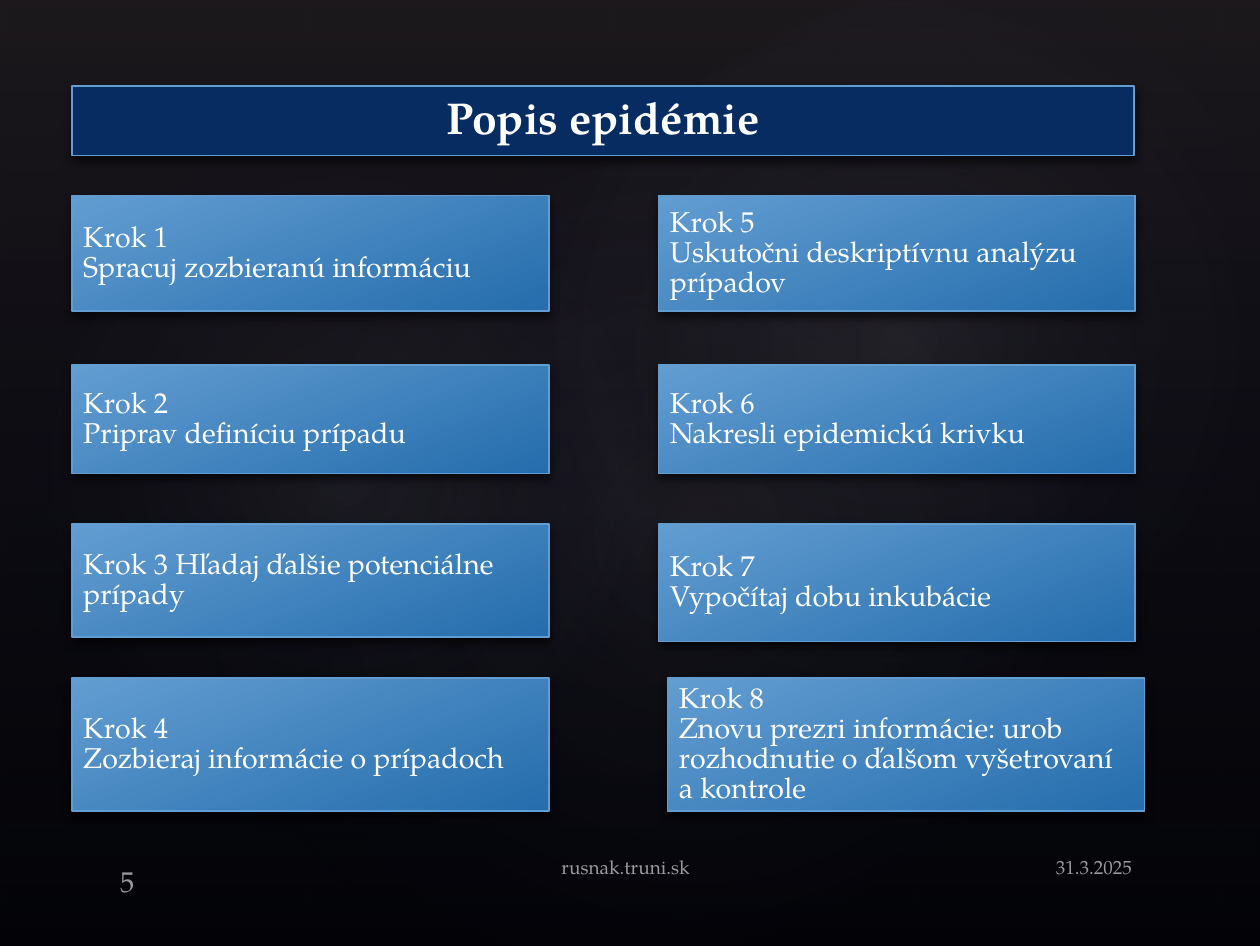
import pptx
import pptx.util
import pptx.oxml
import pptx.oxml.ns
import pptx.dml.color
import pptx.enum.shapes
import pptx.enum.text
from pptx.util import Inches, Pt

FONT = "TeX Gyre Pagella"
COLORS = {
    "black": "000000", "white": "FFFFFF", "navy": "072C62",
    "sky": "629DD1", "blue": "256DAD",
    "plum": "504652", "indigo": "242852", "mist": "C4BCC6",
}

# Content
TITLE = "Popis epidémie"
# Each column: left edge, then (lines, height, shift to the right) per step
COLUMNS = [
    (0.63, [
        (["Krok 1", "Spracuj zozbieranú informáciu"], 1.01, 0),
        (["Krok 2", "Priprav definíciu prípadu"], 0.95, 0),
        (["Krok 3 Hľadaj ďalšie potenciálne prípady"], 0.99, 0),
        (["Krok 4", "Zozbieraj informácie o prípadoch"], 1.16, 0),
    ]),
    (5.76, [
        (["Krok 5", "Uskutočni deskriptívnu analýzu prípadov"], 1.01, 0),
        (["Krok 6", "Nakresli epidemickú krivku"], 0.95, 0),
        (["Krok 7", "Vypočítaj dobu inkubácie"], 1.03, 0),
        (["Krok 8", "Znovu prezri informácie: urob rozhodnutie o ďalšom "
          "vyšetrovaní a kontrole"], 1.16, 0.08),
    ]),
]
ROW_TOPS = [1.71, 3.19, 4.58, 5.93]
STEP_WIDTH = 4.17
# Footer: text, left, width, size, alignment, anchor, bottom inset
FOOTER = [
    ("31.3.2025", 8.74, 1.27, 12, "RIGHT", "TOP", 0.06),
    ("5", 0.94, 0.9, 18, "LEFT", "BOTTOM", 0.01),
    ("rusnak.truni.sk", 4.8, 1.72, 12, "LEFT", "TOP", 0.06),
]
# Background glows: position and size, rotation, centre opacity
GLOWS = [
    ((1.65, 1.25, 8.73, 6.88), 328.7, 7),
    ((-0.33, 1.41, 6.68, 5.4), 294.3, 8),
    ((3.95, 0.14, 7.81, 5.73), 328.7, 8),
]

DRAWING = pptx.oxml.ns.nsdecls("a")
KINDS = pptx.enum.shapes.MSO_SHAPE
ALIGN = pptx.enum.text.PP_ALIGN
ANCHOR = pptx.enum.text.MSO_ANCHOR


def rgb(name):
    return pptx.dml.color.RGBColor.from_string(COLORS[name])


def color_xml(name, opacity):
    return (f'<a:srgbClr val="{COLORS[name]}">'
            f'<a:alpha val="{opacity * 1000}"/></a:srgbClr>')


def set_gradient(shape, stops, angle=None):
    """Linear when an angle is given, otherwise radial from the centre."""
    stops_xml = "".join(f'<a:gs pos="{place * 1000}">{color_xml(name, opacity)}</a:gs>'
                        for place, name, opacity in stops)
    if angle is None:
        course = ('<a:path path="circle"><a:fillToRect l="50000" t="50000" '
                  'r="50000" b="50000"/></a:path>')
    else:
        course = f'<a:lin ang="{angle * 60000}" scaled="0"/>'
    gradient = pptx.oxml.parse_xml(
        f'<a:gradFill {DRAWING} rotWithShape="1"><a:gsLst>{stops_xml}</a:gsLst>'
        f'{course}</a:gradFill>')
    shape.fill.background()
    properties = shape.element.spPr
    properties.replace(properties.find(pptx.oxml.ns.qn("a:noFill")), gradient)


def add_plain(page, kind, place):
    shape = page.shapes.add_shape(kind, *map(Inches, place))
    shape.shadow.inherit = False
    shape.line.fill.background()
    return shape


def add_box(page, place, lines, size, bold=False, align=ALIGN.LEFT):
    box = add_plain(page, KINDS.RECTANGLE, place)
    box.line.color.rgb = rgb("sky")
    box.line.width = Pt(1)
    effects = box.element.spPr.find(pptx.oxml.ns.qn("a:effectLst"))
    effects.append(pptx.oxml.parse_xml(
        f'<a:outerShdw {DRAWING} blurRad="{Pt(6)}" dist="{Pt(3)}" dir="5400000" '
        f'rotWithShape="0">{color_xml("black", 60)}</a:outerShdw>'))
    frame = box.text_frame
    frame.word_wrap = True
    frame.vertical_anchor = ANCHOR.MIDDLE
    frame.text = "\n".join(lines)
    for para in frame.paragraphs:
        para.alignment = align
        para.line_spacing = 0.87
        para.font.name, para.font.size, para.font.bold = FONT, Pt(size), bold
        para.font.color.rgb = rgb("white")
    return box


def add_footer(page, text, left, width, size, align, anchor, bottom):
    box = page.shapes.add_textbox(*map(Inches, (left, 7.42, width, 0.44)))
    frame = box.text_frame
    frame.word_wrap = True
    frame.vertical_anchor = ANCHOR[anchor]
    frame.margin_left = frame.margin_right = Inches(0.11)
    frame.margin_top, frame.margin_bottom = Inches(0.06), Inches(bottom)
    frame.text = text
    para = frame.paragraphs[0]
    para.alignment = ALIGN[align]
    span = para.runs[0]
    span.font.name, span.font.size = FONT, Pt(size)
    span.font.color.rgb = rgb("white")
    solid = span.font.fill._xPr.find(pptx.oxml.ns.qn("a:solidFill"))
    solid[0].append(pptx.oxml.parse_xml(f'<a:alpha {DRAWING} val="60000"/>'))


def main():
    deck = pptx.Presentation()
    deck.slide_width, deck.slide_height = Inches(11.02), Inches(8.27)
    page = deck.slides.add_slide(deck.slide_layouts[6])

    # Background
    page.background.fill.solid()
    page.background.fill.fore_color.rgb = rgb("black")
    veil = add_plain(page, KINDS.RECTANGLE, (0, 0, 11.02, 8.27))
    set_gradient(veil, [(0, "plum", 36), (100, "indigo", 10)], 90)
    for place, rotation, opacity in GLOWS:
        glow = add_plain(page, KINDS.OVAL, place)
        glow.rotation = rotation
        set_gradient(glow, [(0, "mist", opacity), (58, "indigo", 0)])

    # Footer
    for entry in FOOTER:
        add_footer(page, *entry)

    # Title
    title = add_box(page, (0.63, 0.75, 9.29, 0.61), [TITLE], 28, True, ALIGN.CENTER)
    title.fill.solid()
    title.fill.fore_color.rgb = rgb("navy")

    # Steps
    for left, steps in COLUMNS:
        for top, (lines, height, shift) in zip(ROW_TOPS, steps):
            step = add_box(page, (left + shift, top, STEP_WIDTH, height), lines, 18)
            set_gradient(step, [(0, "sky", 100), (100, "blue", 100)], 69)

    deck.save("out.pptx")


if __name__ == "__main__":
    main()
